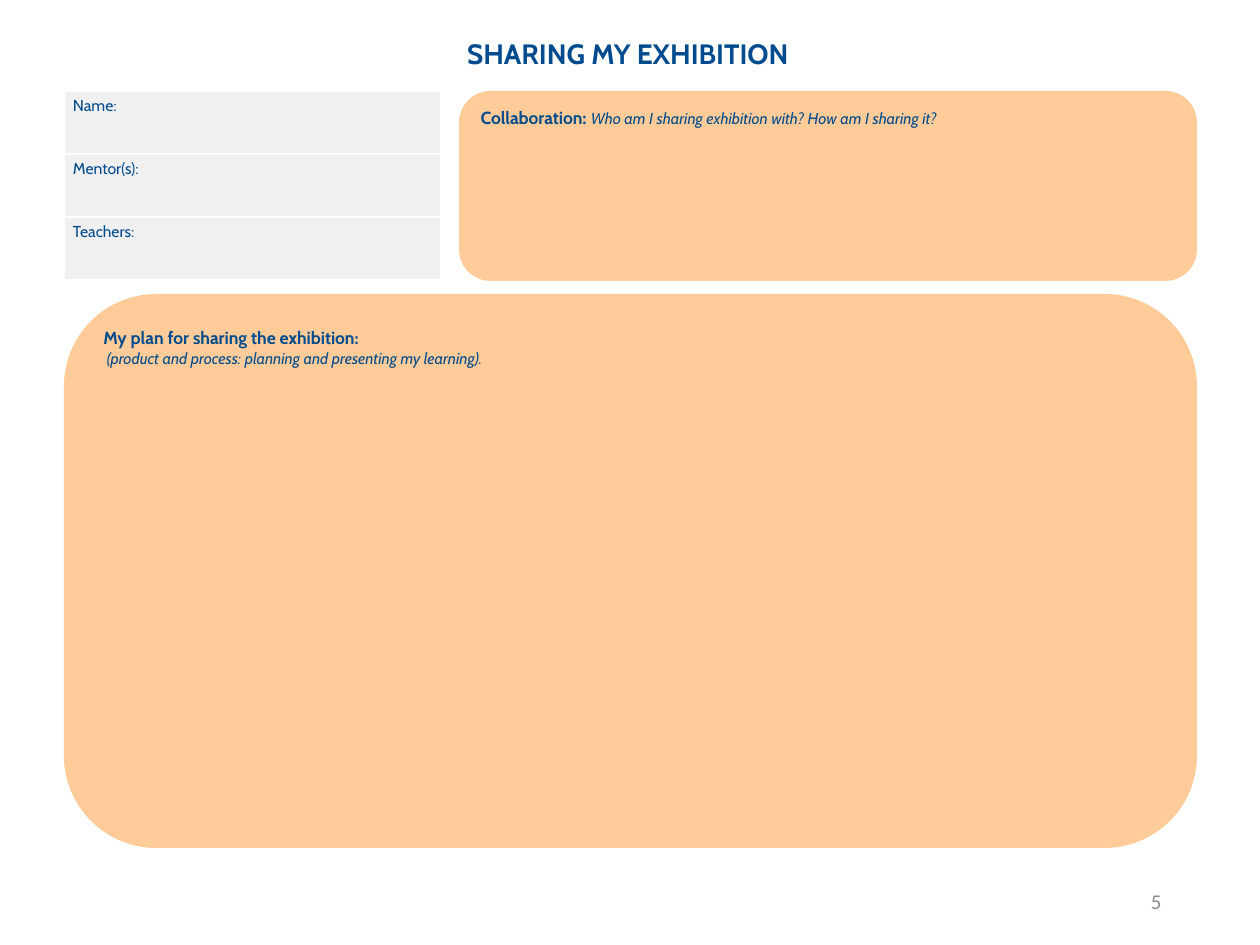
"""Build the planning sheet for sharing an exhibition."""
from dataclasses import dataclass

from lxml import etree
from pptx import Presentation
from pptx.dml.color import RGBColor
from pptx.enum.shapes import MSO_SHAPE
from pptx.enum.text import MSO_ANCHOR, MSO_AUTO_SIZE, PP_ALIGN
from pptx.oxml.ns import qn
from pptx.util import Emu, Pt

ROUNDED = MSO_SHAPE.ROUNDED_RECTANGLE
TOP, MIDDLE = MSO_ANCHOR.TOP, MSO_ANCHOR.MIDDLE
LEFT, CENTER, RIGHT = PP_ALIGN.LEFT, PP_ALIGN.CENTER, PP_ALIGN.RIGHT
NO_AUTOFIT = MSO_AUTO_SIZE.NONE
TITLE_ONLY = 5
EMU_PER_PX = 914400 / 126
COLORS = {"ink": "004B8D", "panel": "FFCC99", "field": "F0F0F0",
          "border": "FFFFFF", "number": "8C8C8C"}


@dataclass(frozen=True)
class Box:
    left: int
    top: int
    width: int
    height: int

    def emu(self) -> tuple[Emu, ...]:
        return tuple(map(px, (self.left, self.top, self.width, self.height)))


@dataclass(frozen=True)
class Span:
    text: str
    size: float
    bold: bool = False
    italic: bool = False
    font: str = "Cabin"
    color: str = "ink"


@dataclass(frozen=True)
class Panel:
    box: Box
    lines: tuple[tuple[Span, ...], ...]


FIELDS_BOX = Box(64, 91, 377, 189)
FIELDS = ("Name:", "Mentor(s):", "Teachers:")
PANELS = (
    Panel(Box(459, 91, 738, 190), (
        (Span("Collaboration", 10, bold=True),
         Span(": ", 10.5, bold=True),
         Span("Who am I sharing exhibition with? How am I sharing it?", 9, italic=True)),
    )),
    Panel(Box(64, 294, 1133, 554), (
        (Span("My plan for sharing the exhibition:", 10, bold=True),),
        (Span(" ", 9, bold=True, italic=True),
         Span("(product and process: planning and presenting my learning).", 9, italic=True)),
    )),
)


def px(length: int) -> Emu:
    return Emu(round(length * EMU_PER_PX))


def rgb(name: str) -> RGBColor:
    return RGBColor.from_string(COLORS[name])


def write(frame, lines, align=LEFT, anchor=TOP) -> None:
    frame.text = "\n".join("" for _ in lines)
    frame.word_wrap = True
    frame.auto_size = NO_AUTOFIT
    frame.vertical_anchor = anchor
    for paragraph, spans in zip(frame.paragraphs, lines):
        paragraph.alignment = align
        for span in spans:
            run = paragraph.add_run()
            run.text = span.text
            font = run.font
            font.name, font.size = span.font, Pt(span.size)
            font.bold, font.italic = span.bold, span.italic
            font.color.rgb = rgb(span.color)


def add_title(slide, box: Box, span: Span) -> None:
    title = slide.shapes.title
    title.left, title.top, title.width, title.height = box.emu()
    write(title.text_frame, ((span,),), CENTER, MIDDLE)


def add_panel(slide, panel: Panel) -> None:
    shape = slide.shapes.add_shape(ROUNDED, *panel.box.emu())
    shape.shadow.inherit = False
    shape.fill.solid()
    shape.fill.fore_color.rgb = rgb("panel")
    shape.line.fill.background()
    write(shape.text_frame, panel.lines)


def add_borders(cell) -> None:
    properties = cell._tc.get_or_add_tcPr()
    for position, side in enumerate(("lnL", "lnR", "lnT", "lnB")):
        line = etree.Element(qn(f"a:{side}"), w=str(Pt(1)))
        fill = etree.SubElement(line, qn("a:solidFill"))
        etree.SubElement(fill, qn("a:srgbClr"), val=COLORS["border"])
        properties.insert(position, line)


def add_fields(slide, box: Box, labels: tuple[str, ...]) -> None:
    table = slide.shapes.add_table(len(labels), 1, *box.emu()).table
    table.first_row = table.horz_banding = False
    for row, label in enumerate(labels):
        cell = table.cell(row, 0)
        cell.margin_left = cell.margin_right = px(9)
        cell.margin_top = cell.margin_bottom = px(5)
        cell.fill.solid()
        cell.fill.fore_color.rgb = rgb("field")
        add_borders(cell)
        cell.text = label
        font = cell.text_frame.paragraphs[0].runs[0].font
        font.name, font.size, font.color.rgb = "Cabin", Pt(9), rgb("ink")


def add_page_number(slide, box: Box, span: Span) -> None:
    number = slide.shapes.add_textbox(*box.emu())
    write(number.text_frame, ((span,),), RIGHT, MIDDLE)


def main() -> None:
    deck = Presentation()
    deck.slide_width, deck.slide_height = px(1260), px(945)
    slide = deck.slides.add_slide(deck.slide_layouts[TITLE_ONLY])
    add_page_number(slide, Box(890, 876, 284, 50),
                    Span("5", 12, font="Calibri", color="number"))
    add_title(slide, Box(1, 30, 1260, 47), Span("SHARING MY EXHIBITION ", 16, bold=True))
    add_fields(slide, FIELDS_BOX, FIELDS)
    for panel in PANELS:
        add_panel(slide, panel)
    deck.save("out.pptx")


if __name__ == "__main__":
    main()
